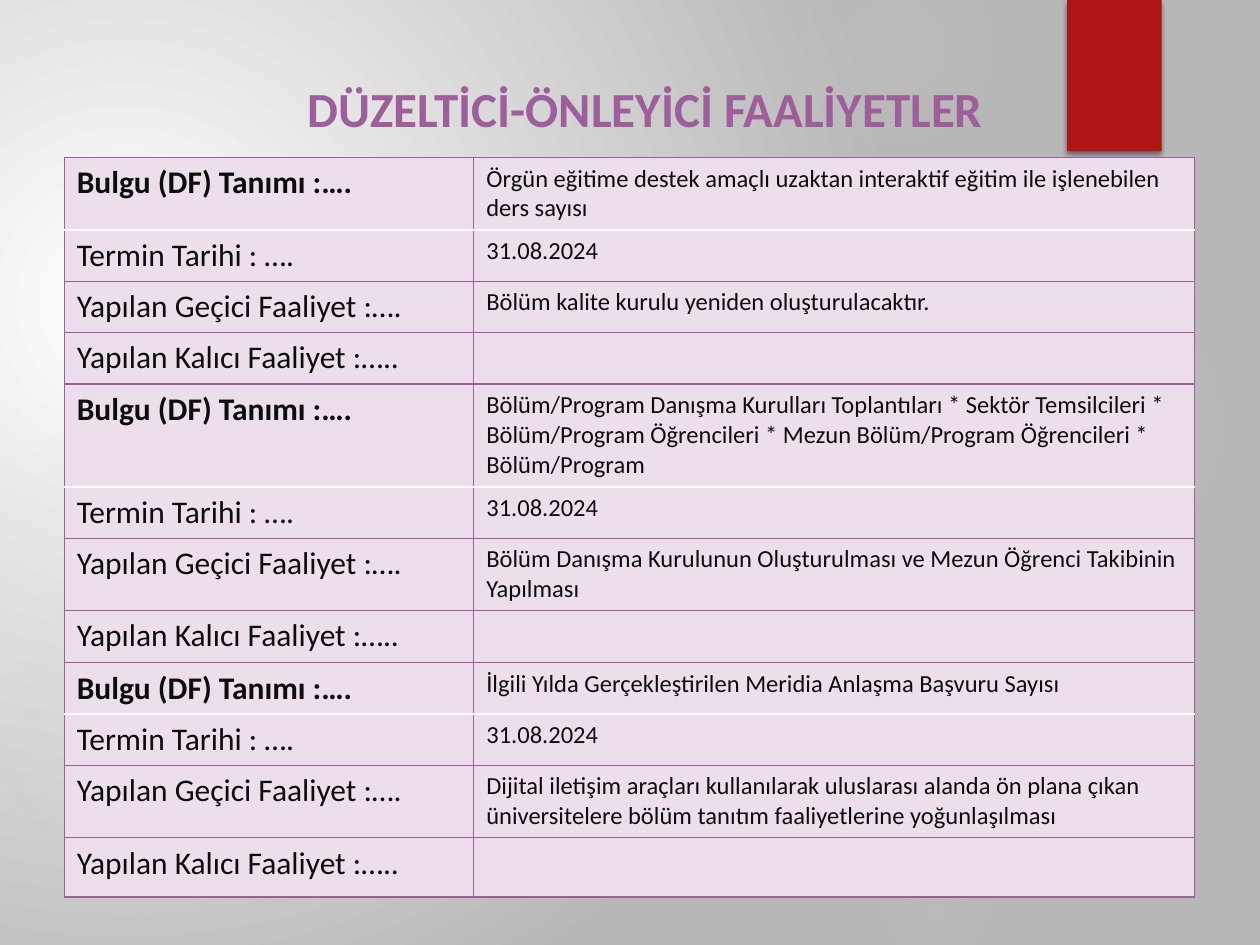
from collections import namedtuple

from lxml.etree import SubElement
from pptx import Presentation
from pptx.dml.color import RGBColor
from pptx.enum.shapes import MSO_SHAPE
from pptx.enum.text import MSO_ANCHOR, PP_ALIGN
from pptx.oxml import parse_xml
from pptx.oxml.ns import nsdecls, qn
from pptx.util import Inches, Pt

COLORS = {
    "white": "FFFFFF", "gray": "B7B7B7", "orb": "D9D9D9", "ribbon": "B01513",
    "purple": "9E5E9B", "lilac": "ECDFEB", "ink": "0C0D0D", "shadow": "000000",
}
FONT = "Calibri"
WIDTH, HEIGHT = Inches(10), Inches(7.5)

# Boxes, row heights and column widths are percentages of the slide
Box = namedtuple("Box", "left top width height")
COLUMNS = (32.5, 57.2)
ROW_MIN, ROW_PADDING, LINE = 5.43, 1.33, 3.17
LAST_ROW = 6.27

# Box, then (stop, opacity) pairs
ORBS = [
    (Box(68.9, 24.4, 30.8, 41.07), [(0, 7), (36, 6), (69, 0)]),
    (Box(62.2, -6.67, 17.5, 23.33), [(0, 14), (36, 7), (73, 0)]),
    (Box(68.9, 88.93, 10.8, 14.4), [(0, 9), (36, 5), (66, 0)]),
    (Box(-1.7, 38.93, 45.8, 61.07), [(0, 11), (36, 10), (75, 0)]),
    (Box(-9.2, 42.27, 25.8, 34.4), [(0, 8), (36, 8), (72, 0)]),
]
LABELS = ["Bulgu (DF) Tanımı :….", "Termin Tarihi : ….",
          "Yapılan Geçici Faaliyet :….", "Yapılan Kalıcı Faaliyet :….."]
DUE_DATE = "31.08.2024"

# Table top, last row height, then finding and temporary action with line counts
FINDINGS = [
    (16.67, ROW_MIN,
     ("Örgün eğitime destek amaçlı uzaktan interaktif eğitim ile işlenebilen "
      "ders sayısı", 2),
     ("Bölüm kalite kurulu yeniden oluşturulacaktır.", 1)),
    (40.67, LAST_ROW,
     ("Bölüm/Program Danışma Kurulları Toplantıları * Sektör Temsilcileri * "
      "Bölüm/Program Öğrencileri * Mezun Bölüm/Program Öğrencileri * "
      "Bölüm/Program", 3),
     ("Bölüm Danışma Kurulunun Oluşturulması ve Mezun Öğrenci Takibinin "
      "Yapılması", 2)),
    (70.13, LAST_ROW,
     ("İlgili Yılda Gerçekleştirilen Meridia Anlaşma Başvuru Sayısı", 1),
     ("Dijital iletişim araçları kullanılarak uluslarası alanda ön plana çıkan "
      "üniversitelere bölüm tanıtım faaliyetlerine yoğunlaşılması", 2)),
]


def across(share):
    return int(WIDTH * share / 100)


def down(share):
    return int(HEIGHT * share / 100)


def place(box):
    return across(box.left), down(box.top), across(box.width), down(box.height)


def color(name):
    return RGBColor.from_string(COLORS[name])


def write(para, text, size=14, ink="ink", bold=False, align=PP_ALIGN.LEFT):
    para.alignment = align
    span = para.add_run()
    span.text = text
    span.font.name, span.font.size, span.font.bold = FONT, Pt(size), bold
    span.font.color.rgb = color(ink)


def radial_fill(parent, stops, center):
    """Swap the solid fill inside parent for a circular gradient."""
    marks = "".join(
        f'<a:gs pos="{stop * 1000}"><a:srgbClr val="{COLORS[name]}">'
        f'<a:alpha val="{opacity * 1000}"/></a:srgbClr></a:gs>'
        for stop, name, opacity in stops)
    edges = " ".join(f'{side}="{share * 1000}"' for side, share in zip("ltrb", center))
    gradient = parse_xml(
        f'<a:gradFill {nsdecls("a")} rotWithShape="1"><a:gsLst>{marks}</a:gsLst>'
        f'<a:path path="circle"><a:fillToRect {edges}/></a:path></a:gradFill>')
    parent.replace(parent.find(qn("a:solidFill")), gradient)


def add_plain_shape(page, kind, box, fill):
    shape = page.shapes.add_shape(kind, *place(box))
    shape.shadow.inherit = False
    shape.fill.solid()
    shape.fill.fore_color.rgb = color(fill)
    shape.line.fill.background()
    return shape


def add_backdrop(page):
    page.background.fill.solid()
    backdrop = next(page.element.iter(qn("p:bgPr")))
    radial_fill(backdrop, [(0, "white", 100), (100, "gray", 100)], (45, 65, 125, 100))
    for box, stops in ORBS:
        orb = add_plain_shape(page, MSO_SHAPE.OVAL, box, "orb")
        radial_fill(orb.element.spPr, [(stop, "orb", opacity) for stop, opacity in stops],
                    (50, 50, 50, 50))


def add_ribbon(page, box):
    ribbon = add_plain_shape(page, MSO_SHAPE.RECTANGLE, box, "ribbon")
    effects = ribbon.element.spPr.find(qn("a:effectLst"))
    shadow = SubElement(effects, qn("a:outerShdw"), blurRad=str(Pt(3)),
                        dist=str(Pt(2)), dir="5400000", rotWithShape="0")
    tint = SubElement(shadow, qn("a:srgbClr"), val=COLORS["shadow"])
    SubElement(tint, qn("a:alpha"), val="45000")


def add_title(page, box, text):
    frame = page.shapes.add_textbox(*place(box)).text_frame
    frame.word_wrap = True
    frame.vertical_anchor = MSO_ANCHOR.MIDDLE
    para = frame.paragraphs[0]
    para.line_spacing, para.space_after = 0.9, Pt(6)
    write(para, text, size=28, ink="purple", bold=True, align=PP_ALIGN.CENTER)


def style_cell(cell, row):
    cell.fill.solid()
    cell.fill.fore_color.rgb = color("lilac")
    white_side = {0: "B", 1: "T"}.get(row)
    for index, side in enumerate("LRTB"):
        name, width = ("white", 1.5) if side == white_side else ("purple", 0.75)
        cell._tc.get_or_add_tcPr().insert(index, parse_xml(
            f'<a:ln{side} {nsdecls("a")} w="{Pt(width)}"><a:solidFill>'
            f'<a:srgbClr val="{COLORS[name]}"/></a:solidFill></a:ln{side}>'))


def add_finding(page, top, last_row, finding, action):
    entries = [finding, (DUE_DATE, 1), action, ("", 1)]
    heights = [max(ROW_MIN, ROW_PADDING + LINE * lines) for _, lines in entries]
    heights[-1] = last_row
    box = Box(5.1, top, sum(COLUMNS), sum(heights))
    table = page.shapes.add_table(len(entries), len(COLUMNS), *place(box)).table
    for column, width in zip(table.columns, COLUMNS):
        column.width = across(width)
    for row, (label, (text, _), height) in enumerate(zip(LABELS, entries, heights)):
        table.rows[row].height = down(height)
        label_cell, text_cell = table.cell(row, 0), table.cell(row, 1)
        write(label_cell.text_frame.paragraphs[0], label, size=18, bold=row == 0)
        if text:
            write(text_cell.text_frame.paragraphs[0], text)
        for cell in (label_cell, text_cell):
            style_cell(cell, row)


def main():
    deck = Presentation()
    deck.slide_width, deck.slide_height = WIDTH, HEIGHT
    page = deck.slides.add_slide(deck.slide_layouts[6])
    add_backdrop(page)
    add_ribbon(page, Box(84.7, 0, 7.5, 16))
    add_title(page, Box(18.5, 7.07, 65.4, 9.47), "DÜZELTİCİ-ÖNLEYİCİ FAALİYETLER")
    for finding in FINDINGS:
        add_finding(page, *finding)
    deck.save("out.pptx")


if __name__ == "__main__":
    main()
